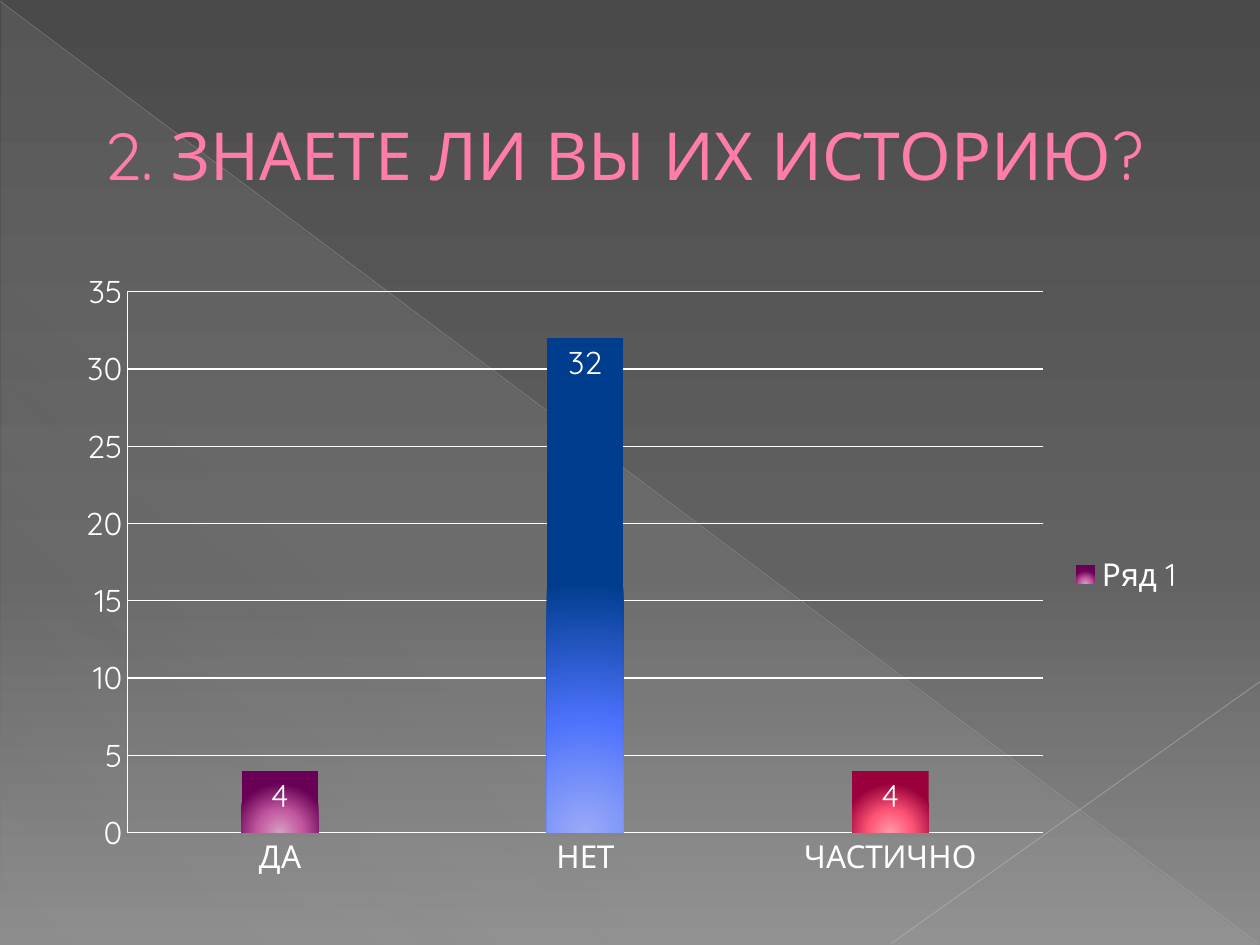
from lxml import etree
from pptx import Presentation
from pptx import util as u
from pptx.chart.data import CategoryChartData
from pptx.dml.color import RGBColor
from pptx.enum import chart as ch, shapes, text
from pptx.oxml.ns import qn

Pt = u.Pt
FONT = "Quicksand"
WHITE = RGBColor(0xFF, 0xFF, 0xFF)
PINK = RGBColor(0xFF, 0x7D, 0xA7)
DARK_PINK = RGBColor(0xB1, 0x27, 0x61)
PALE = RGBColor(0xD2, 0xD2, 0xD2)

WIDTH, HEIGHT = 720, 540
TITLE = "2. ЗНАЕТЕ ЛИ ВЫ ИХ ИСТОРИЮ?"
SERIES = "Ряд 1"
ANSWERS = [("ДА", 4), ("НЕТ", 32), ("ЧАСТИЧНО", 4)]

# Gradient stops: position %, colour, opacity %
BACKDROP = [(0, RGBColor(0x4A, 0x4A, 0x4A), 100),
            (60, RGBColor(0x62, 0x62, 0x62), 100),
            (100, RGBColor(0x8C, 0x8C, 0x8C), 100)]
SHEEN = [(0, PALE, 10), (70, PALE, 8), (100, PALE, 1)]
BAR_COLORS = [
    (RGBColor(0xD5, 0xA2, 0xC3), RGBColor(0xC2, 0x59, 0xA1), RGBColor(0x69, 0x00, 0x55)),
    (RGBColor(0x9A, 0xAA, 0xF8), RGBColor(0x4C, 0x71, 0xFB), RGBColor(0x00, 0x3D, 0x8E)),
    (RGBColor(0xFF, 0x9B, 0xA9), RGBColor(0xFF, 0x55, 0x75), RGBColor(0x99, 0x00, 0x3C)),
]
# Start, end, colour, line width, opacity %
RAYS = [((0, 0.72), (719.28, 539.28), RGBColor(0xBF, 0xBF, 0xBF), 0.39, 35),
        ((720, 389.52), (509.04, 539.28), RGBColor(0xC6, 0xC6, 0xC6), 0.47, 45)]


def add(parent, tag, **attributes):
    return etree.SubElement(parent, qn(tag), {k: str(v) for k, v in attributes.items()})


def set_gradient(gradient, stops, angle=None):
    """Refill a gradFill element: linear at the angle, or radial from below the shape."""
    for child in list(gradient):
        gradient.remove(child)
    stop_list = add(gradient, "a:gsLst")
    for position, color, opacity in stops:
        stop = add(stop_list, "a:gs", pos=position * 1000)
        value = add(stop, "a:srgbClr", val=color)
        if opacity < 100:
            add(value, "a:alpha", val=opacity * 1000)
    if angle is None:
        radial = add(gradient, "a:path", path="circle")
        add(radial, "a:fillToRect", l=50000, t=155000, r=50000, b=-55000)
    else:
        add(gradient, "a:lin", ang=angle * 60000, scaled=0)


def gradients(element):
    return list(element.iter(qn("a:gradFill")))


def add_backdrop(page):
    page.background.fill.gradient()
    set_gradient(gradients(page.element)[0], BACKDROP, 90)

    triangle = page.shapes.add_shape(
        shapes.MSO_SHAPE.RIGHT_TRIANGLE, Pt(0.72), Pt(1.44), Pt(718.56), Pt(538.56))
    triangle.shadow.inherit = False
    triangle.line.fill.background()
    triangle.fill.gradient()
    set_gradient(gradients(triangle.element)[0], SHEEN, 133)

    for start, end, color, width, opacity in RAYS:
        ray = page.shapes.add_connector(
            shapes.MSO_CONNECTOR.STRAIGHT, *map(Pt, start + end))
        ray.line.width = Pt(width)
        ray.line.color.rgb = color
        add(next(ray.element.spPr.iter(qn("a:srgbClr"))), "a:alpha", val=opacity * 1000)
        add(ray.element.spPr, "a:effectLst")


def add_title(page):
    box = page.shapes.add_textbox(Pt(14.4), Pt(37.44), Pt(697.68), Pt(101.52))
    frame = box.text_frame
    frame.word_wrap = True
    frame.vertical_anchor = text.MSO_ANCHOR.MIDDLE
    para = frame.paragraphs[0]
    properties = para._p.get_or_add_pPr()
    properties.set("marL", str(Pt(38.16)))
    properties.set("indent", "0")
    span = para.add_run()
    span.text = TITLE
    span.font.size = Pt(37.8)
    span.font.name = FONT
    span.font.color.rgb = PINK
    outline = etree.Element(qn("a:ln"), w=str(Pt(0.5)))
    add(add(outline, "a:solidFill"), "a:srgbClr", val=DARK_PINK)
    span.font._element.insert(0, outline)


def add_answer_chart(page):
    data = CategoryChartData()
    data.categories = [name for name, count in ANSWERS]
    data.add_series(SERIES, [count for name, count in ANSWERS])
    chart = page.shapes.add_chart(
        ch.XL_CHART_TYPE.COLUMN_STACKED, Pt(36), Pt(148.32), Pt(648), Pt(360), data).chart
    chart.font.size = Pt(18)
    chart.font.name = FONT
    chart.font.color.rgb = WHITE
    chart.has_title = False
    chart.has_legend = True
    chart.legend.position = ch.XL_LEGEND_POSITION.RIGHT
    chart.legend.include_in_layout = False

    values = chart.value_axis
    values.minimum_scale, values.maximum_scale, values.major_unit = 0, 35, 5
    values.has_major_gridlines = True
    for axis in (chart.category_axis, values):
        axis.major_tick_mark = axis.minor_tick_mark = ch.XL_TICK_MARK.NONE
    for item in (chart.category_axis, values, values.major_gridlines):
        item.format.line.color.rgb = WHITE
        item.format.line.width = Pt(0.75)

    plot = chart.plots[0]
    plot.gap_width, plot.overlap = 300, 100
    plot.vary_by_categories = False
    bars = plot.series[0]
    bars.invert_if_negative = False
    for part in (bars, bars.points[1], bars.points[2]):
        part.format.fill.gradient()
    for gradient, colors in zip(gradients(bars._element), BAR_COLORS):
        set_gradient(gradient, zip((0, 46, 100), colors, (100, 100, 100)))
    labels = bars.data_labels
    labels.show_value = True
    labels.position = ch.XL_LABEL_POSITION.INSIDE_END


def main():
    deck = Presentation()
    deck.slide_width, deck.slide_height = Pt(WIDTH), Pt(HEIGHT)
    page = deck.slides.add_slide(deck.slide_layouts[6])
    add_backdrop(page)
    add_title(page)
    add_answer_chart(page)
    deck.save("out.pptx")


if __name__ == "__main__":
    main()
